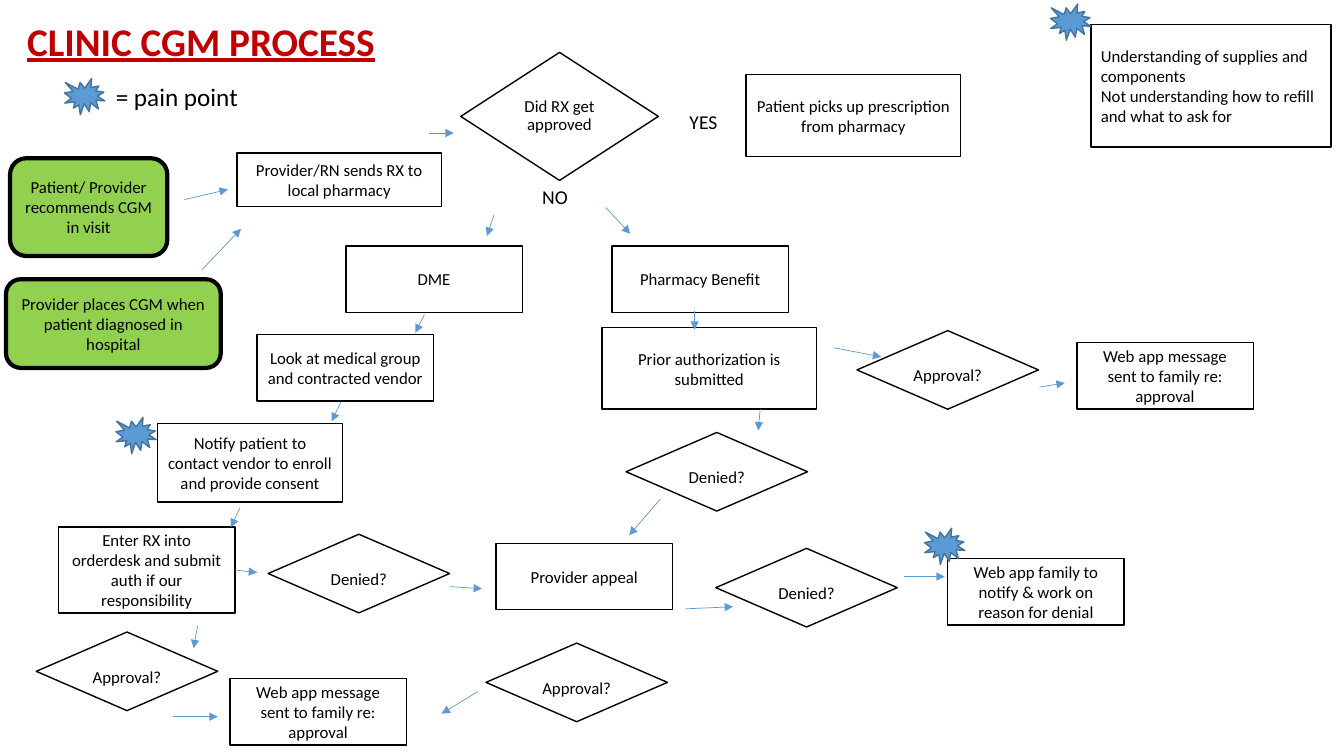
from lxml.etree import SubElement
from pptx import Presentation
from pptx.dml.color import RGBColor
from pptx.enum.shapes import MSO_CONNECTOR, MSO_SHAPE
from pptx.enum.text import MSO_ANCHOR, MSO_AUTO_SIZE, PP_ALIGN
from pptx.oxml.ns import qn
from pptx.util import Inches, Pt

BLACK = RGBColor(0, 0, 0)
WHITE = RGBColor(255, 255, 255)
RED = RGBColor(0xC0, 0, 0)
GREEN = RGBColor(0x92, 0xD0, 0x50)
BLUE = RGBColor(0x5B, 0x9B, 0xD5)
NAVY = RGBColor(0x43, 0x73, 0x9E)
FONT = "Calibri"

# text, left, top, width, height
STEPS = [
    ("Provider/RN sends RX to local pharmacy", 2.35, 1.52, 2.03, 0.53),
    ("Patient picks up prescription from pharmacy", 7.4, 0.74, 2.13, 0.81),
    ("Prior authorization is submitted", 5.97, 3.25, 2.13, 0.81),
    ("Notify patient to contact vendor to enroll and provide consent",
     1.56, 4.2, 1.84, 0.78),
]
# Steps of the usual size: text, left, top
SMALL_STEPS = [
    ("DME", 3.43, 2.44),
    ("Pharmacy Benefit", 6.07, 2.44),
    ("Look at medical group and contracted vendor", 2.55, 3.32),
    ("Provider appeal", 4.92, 5.39),
    ("Web app message sent to family re: approval", 10.68, 3.4),
    ("Web app message sent to family re: approval", 2.28, 6.73),
    ("Web app family to notify & work on reason for denial", 9.4, 5.54),
]
STARTS = [
    ("Patient/ Provider recommends CGM in visit", 0.1, 1.57, 1.56, 0.97),
    ("Provider places CGM when patient diagnosed in hospital",
     0.06, 2.77, 2.13, 0.88),
]
CHECKS = [
    ("Approval?", 8.5, 3.28),
    ("Approval?", 0.36, 6.27),
    ("Approval?", 4.82, 6.38),
    ("Denied?", 2.66, 5.3),
    ("Denied?", 6.21, 4.29),
    ("Denied?", 7.1, 5.44),
]
# text, left, top, width, height, size
LABELS = [
    ("= pain point", 1.05, 0.76, 1.53, 0.4, 18),
    ("YES", 6.74, 1.04, 0.53, 0.34, 14),
    ("NO", 5.28, 1.79, 0.53, 0.34, 14),
]
# from x, from y, to x, to y
ARROWS = [
    (2, 2.68, 2.39, 2.27), (1.83, 1.98, 2.26, 1.88),
    (4.25, 1.32, 4.5, 1.32), (1.96, 6.21, 1.92, 6.43),
    (4.9, 2.13, 4.83, 2.34), (6.01, 2.06, 6.25, 2.32),
    (4.21, 3.12, 4.12, 3.3), (3.38, 3.99, 3.29, 4.18),
    (2.38, 5.04, 2.29, 5.23), (6.55, 4.95, 6.24, 5.31),
    (6.89, 3.09, 6.89, 3.27), (7.54, 4.06, 7.52, 4.27),
    (1.72, 7.11, 2.16, 7.11), (4.46, 5.82, 4.78, 5.84),
    (8.27, 3.45, 8.74, 3.54), (10.31, 3.84, 10.56, 3.8),
    (4.74, 6.86, 4.38, 7.08), (6.8, 6.04, 7.27, 6.02),
    (8.97, 5.72, 9.37, 5.72),
]
PAINS = [(0.64, 0.78), (10.42, 0.04), (1.15, 4.14), (9.17, 5.24)]


def style_text(frame, size, color=BLACK, align=PP_ALIGN.LEFT):
    for para in frame.paragraphs:
        para.alignment = align
        for run in para.runs:
            run.font.name = FONT
            run.font.size = Pt(size)
            run.font.color.rgb = color


def add_node(slide, kind, text, left, top, width, height, fill=WHITE,
             line=BLACK, weight=1, align=PP_ALIGN.CENTER):
    node = slide.shapes.add_shape(
        kind, Inches(left), Inches(top), Inches(width), Inches(height))
    node.shadow.inherit = False
    node.fill.solid()
    node.fill.fore_color.rgb = fill
    node.line.color.rgb = line
    node.line.width = Pt(weight)
    if text:
        frame = node.text_frame
        frame.text = text
        frame.word_wrap = True
        frame.vertical_anchor = MSO_ANCHOR.MIDDLE
        style_text(frame, 12, align=align)
    return node


def add_check(slide, text, left, top):
    """Add a small decision diamond, its word a little below the middle."""
    frame = add_node(slide, MSO_SHAPE.DIAMOND, text,
                     left, top, 1.8, 0.78).text_frame
    frame.margin_left = frame.margin_right = 0
    frame.margin_top = Inches(0.1)
    frame.margin_bottom = 0


def add_label(slide, text, left, top, width, height, size):
    box = slide.shapes.add_textbox(
        Inches(left), Inches(top), Inches(width), Inches(height))
    box.text_frame.text = text
    box.text_frame.word_wrap = True
    style_text(box.text_frame, size)


def add_arrow(slide, x1, y1, x2, y2):
    arrow = slide.shapes.add_connector(
        MSO_CONNECTOR.STRAIGHT, Inches(x1), Inches(y1), Inches(x2), Inches(y2))
    arrow.line.color.rgb = BLUE
    arrow.line.width = Pt(0.5)
    props = arrow._element.spPr
    SubElement(props.find(qn("a:ln")), qn("a:tailEnd"), type="triangle")
    SubElement(props, qn("a:effectLst"))
    return arrow


def set_title(slide, text):
    title = slide.shapes.title
    title.left, title.top = Inches(0.17), Inches(0.12)
    title.width, title.height = Inches(4.69), Inches(0.57)
    frame = title.text_frame
    frame.text = text
    frame.auto_size = MSO_AUTO_SIZE.NONE
    frame.vertical_anchor = MSO_ANCHOR.TOP
    style_text(frame, 28, RED)
    font = frame.paragraphs[0].runs[0].font
    font.bold = font.underline = True


def main():
    deck = Presentation()
    deck.slide_width, deck.slide_height = Inches(13.33), Inches(7.5)
    slide = deck.slides.add_slide(deck.slide_layouts[5])
    set_title(slide, "CLINIC CGM PROCESS")

    for step in STEPS:
        add_node(slide, MSO_SHAPE.RECTANGLE, *step)
    for step in SMALL_STEPS:
        add_node(slide, MSO_SHAPE.RECTANGLE, *step, 1.75, 0.66)
    for start in STARTS:
        add_node(slide, MSO_SHAPE.ROUNDED_RECTANGLE, *start, GREEN, weight=3)
    add_node(slide, MSO_SHAPE.RECTANGLE,
             "Understanding of supplies and components\n"
             "Not understanding how to refill and what to ask for",
             10.82, 0.24, 2.38, 1.22, align=PP_ALIGN.LEFT)
    enter = add_node(
        slide, MSO_SHAPE.RECTANGLE,
        "Enter RX into orderdesk and submit auth if our responsibility",
        0.58, 5.23, 1.75, 0.85)

    query = add_node(slide, MSO_SHAPE.DIAMOND, "Did RX get approved",
                     4.57, 0.52, 1.96, 1.27)
    query.text_frame.paragraphs[0].line_spacing = 0.9
    for check in CHECKS:
        add_check(slide, *check)
    for label in LABELS:
        add_label(slide, *label)

    for ends in ARROWS:
        add_arrow(slide, *ends)
    add_arrow(slide, 2.33, 5.66, 2.55, 5.68).begin_connect(enter, 3)
    for left, top in PAINS:
        add_node(slide, MSO_SHAPE.EXPLOSION1, "", left, top, 0.4, 0.36,
                 BLUE, NAVY)

    deck.save("out.pptx")


if __name__ == "__main__":
    main()
